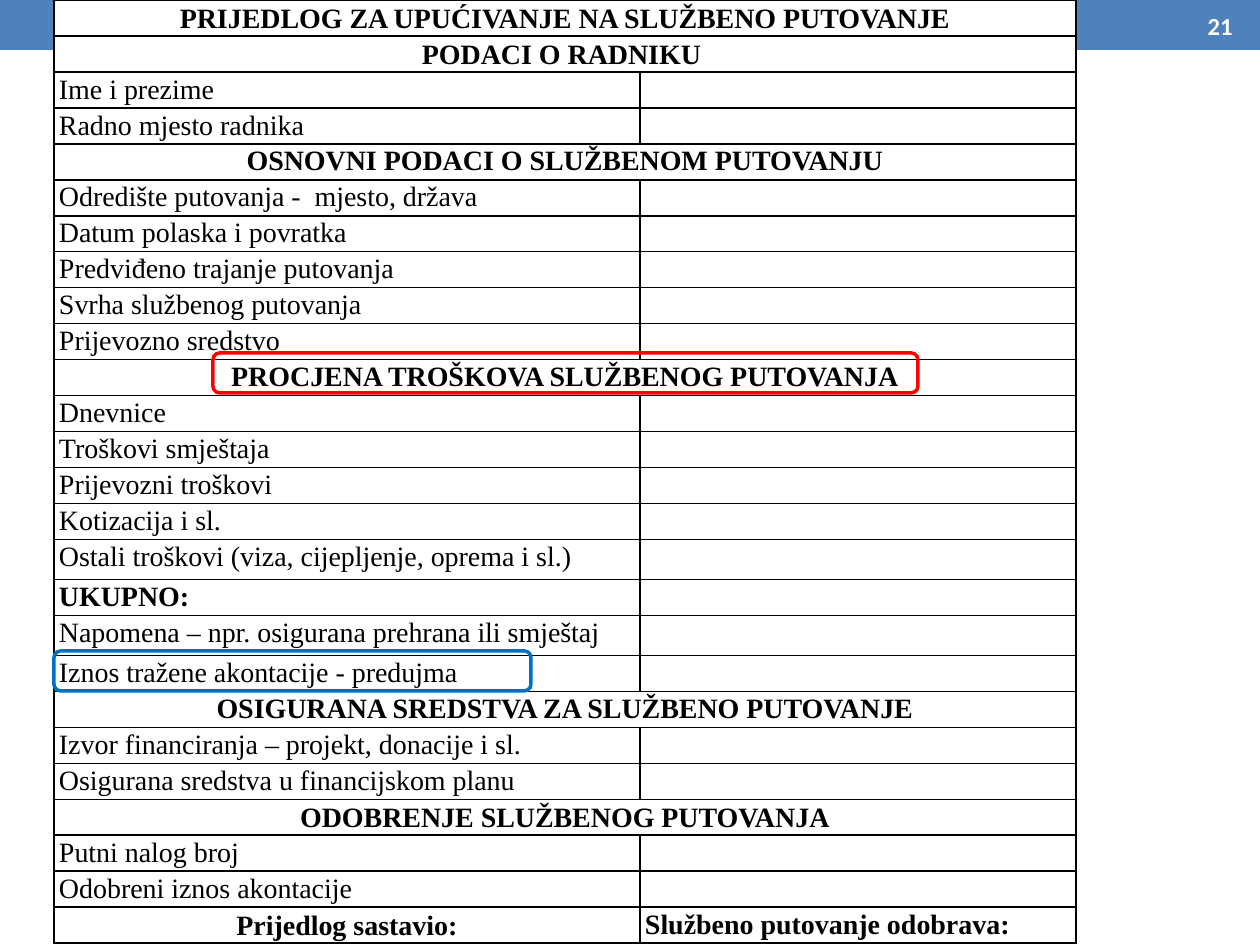
import pptx
import pptx.util
import pptx.dml.color
import pptx.enum.shapes
import pptx.enum.text
import pptx.oxml.ns
import lxml.etree

SCALE = 914400 / 126
BLACK, WHITE = "000000", "FFFFFF"
SERIF = "Times New Roman"
ALIGN = pptx.enum.text.PP_ALIGN
ANCHOR = pptx.enum.text.MSO_ANCHOR
PRESET = pptx.enum.shapes.MSO_SHAPE

HEADING, ENTRY, TOTAL, SIGNATURE = "heading", "entry", "total", "signature"
FORM_ROWS = [
    (HEADING, "PRIJEDLOG ZA UPUĆIVANJE NA SLUŽBENO PUTOVANJE"),
    (HEADING, "PODACI O RADNIKU "),
    (ENTRY, "Ime i prezime"),
    (ENTRY, "Radno mjesto radnika"),
    (HEADING, "OSNOVNI PODACI O SLUŽBENOM PUTOVANJU"),
    (ENTRY, "Odredište putovanja -  mjesto, država"),
    (ENTRY, "Datum polaska i povratka"),
    (ENTRY, "Predviđeno trajanje putovanja"),
    (ENTRY, "Svrha službenog putovanja"),
    (ENTRY, "Prijevozno sredstvo"),
    (HEADING, "PROCJENA TROŠKOVA SLUŽBENOG PUTOVANJA"),
    (ENTRY, "Dnevnice"),
    (ENTRY, "Troškovi smještaja"),
    (ENTRY, "Prijevozni troškovi"),
    (ENTRY, "Kotizacija i sl."),
    (ENTRY, "Ostali troškovi (viza, cijepljenje, oprema i sl.)"),
    (TOTAL, "UKUPNO:"),
    (ENTRY, "Napomena – npr. osigurana prehrana ili smještaj"),
    (ENTRY, "Iznos tražene akontacije - predujma"),
    (HEADING, "OSIGURANA SREDSTVA ZA SLUŽBENO PUTOVANJE"),
    (ENTRY, "Izvor financiranja – projekt, donacije i sl."),
    (ENTRY, "Osigurana sredstva u financijskom planu"),
    (HEADING, "ODOBRENJE SLUŽBENOG PUTOVANJA"),
    (ENTRY, "Putni nalog broj"),
    (ENTRY, "Odobreni iznos akontacije"),
    (SIGNATURE, "Prijedlog sastavio:"),
]
APPROVAL = "Službeno putovanje odobrava:"
MIDDLE_ROWS = {0, 1, 22, 25}
TALL_ROWS = {15, 17}
ROW_HEIGHT, TALL_HEIGHT = 36, 40


def px(length):
    return pptx.util.Emu(round(length * SCALE))


def color(value):
    return pptx.dml.color.RGBColor.from_string(value)


def write(frame, text, font=SERIF, size=16, ink=BLACK, bold=False,
          align=ALIGN.LEFT, spacing=None, after=None):
    para = frame.paragraphs[0]
    para.alignment = align
    if spacing:
        para.line_spacing = spacing
    if after:
        para.space_after = pptx.util.Pt(after)
    span = para.add_run()
    span.text = text
    span.font.name = font
    span.font.size = pptx.util.Pt(size)
    span.font.bold = bold
    span.font.color.rgb = color(ink)


def add_borders(cell):
    properties = cell._tc.get_or_add_tcPr()
    qn = pptx.oxml.ns.qn
    for index, side in enumerate(("lnL", "lnR", "lnT", "lnB")):
        line = lxml.etree.Element(qn(f"a:{side}"), w="12700")
        fill = lxml.etree.SubElement(line, qn("a:solidFill"))
        lxml.etree.SubElement(fill, qn("a:srgbClr"), val=BLACK)
        properties.insert(index, line)


def style_cell(cell, anchor):
    cell.margin_left = cell.margin_right = px(5)
    cell.margin_top = cell.margin_bottom = 0
    cell.vertical_anchor = anchor
    cell.fill.solid()
    cell.fill.fore_color.rgb = color(WHITE)
    add_borders(cell)


def leave_blank(cell):
    para = cell.text_frame.paragraphs[0]
    lxml.etree.SubElement(para._p, pptx.oxml.ns.qn("a:endParaRPr"), sz="1600")


def add_form(page, left, top, widths):
    heights = [TALL_HEIGHT if index in TALL_ROWS else ROW_HEIGHT
               for index in range(len(FORM_ROWS))]
    table = page.shapes.add_table(
        len(FORM_ROWS), len(widths), px(left), px(top),
        px(sum(widths)), px(sum(heights))).table
    table.first_row = table.horz_banding = False
    for column, width in zip(table.columns, widths):
        column.width = px(width)
    for index, (kind, text) in enumerate(FORM_ROWS):
        table.rows[index].height = px(heights[index])
        label, value = table.cell(index, 0), table.cell(index, 1)
        anchor = ANCHOR.MIDDLE if index in MIDDLE_ROWS else ANCHOR.TOP
        for cell in (label, value):
            style_cell(cell, anchor)
        centred = kind in (HEADING, SIGNATURE)
        write(label.text_frame, text, bold=kind != ENTRY, spacing=1.07, after=8,
              align=ALIGN.CENTER if centred else ALIGN.LEFT)
        if kind == SIGNATURE:
            write(value.text_frame, APPROVAL, bold=True)
        else:
            leave_blank(value)
        if kind == HEADING:
            label.merge(value)


def add_header(page, left, top, width, height):
    band = page.shapes.add_shape(
        PRESET.RECTANGLE, px(left), px(top), px(width), px(height))
    band.shadow.inherit = False
    band.fill.solid()
    band.fill.fore_color.rgb = color("4F81BD")
    band.line.fill.background()


def add_page_number(page, left, top, width, height):
    box = page.shapes.add_textbox(px(left), px(top), px(width), px(height))
    box.text_frame.word_wrap = True
    box.text_frame.vertical_anchor = ANCHOR.MIDDLE
    write(box.text_frame, "21", font="Calibri", size=14, ink=WHITE,
          bold=True, align=ALIGN.RIGHT)


def add_highlight(page, left, top, width, height, ink):
    frame = page.shapes.add_shape(
        PRESET.ROUNDED_RECTANGLE, px(left), px(top), px(width), px(height))
    frame.shadow.inherit = False
    frame.fill.background()
    frame.line.color.rgb = color(ink)
    frame.line.width = pptx.util.Pt(2)


def main():
    deck = pptx.Presentation()
    deck.slide_width, deck.slide_height = px(1260), px(945)
    page = deck.slides.add_slide(deck.slide_layouts[6])
    add_header(page, 0, 0, 1260, 50)
    add_form(page, 54, 0, (586, 436))
    add_page_number(page, 1145, 3, 100, 45)
    add_highlight(page, 213, 353, 705, 40, "FF0000")
    add_highlight(page, 54, 651, 477, 40, "0070C0")
    deck.save("out.pptx")


if __name__ == "__main__":
    main()
